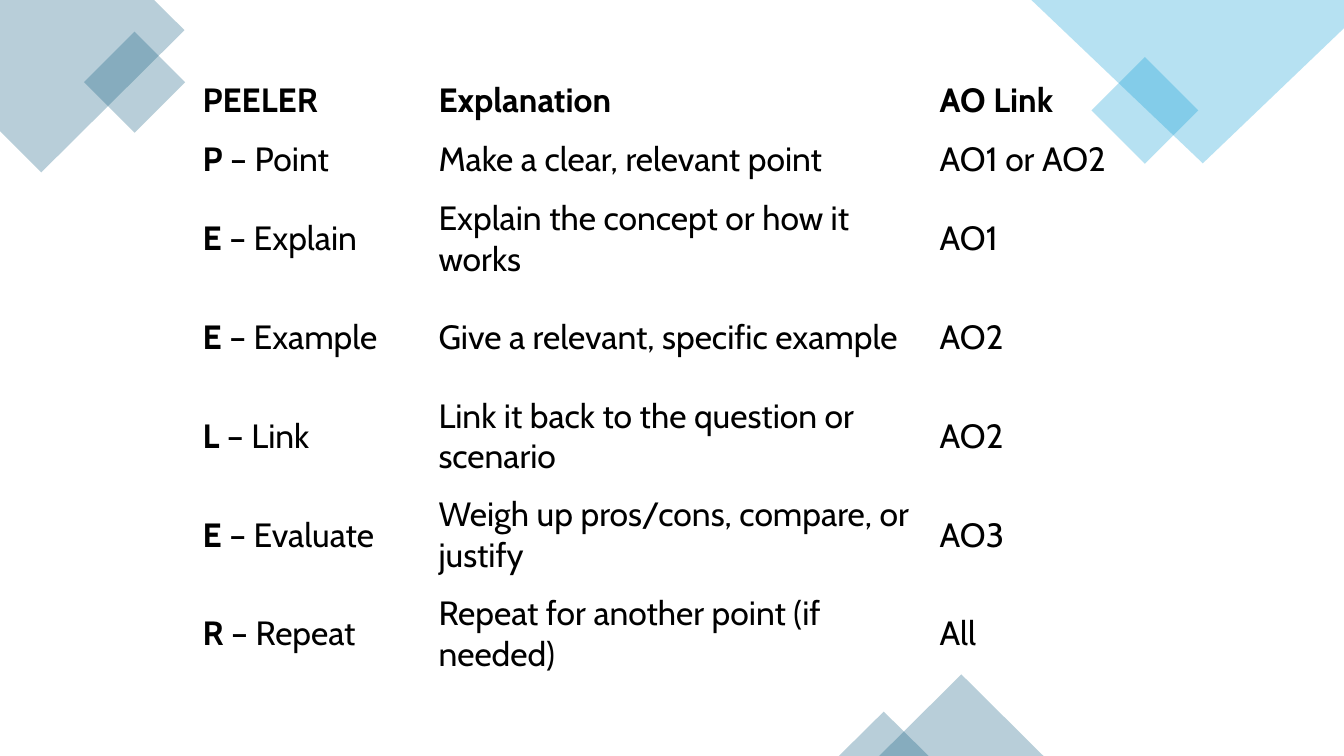
from dataclasses import dataclass

from lxml.etree import SubElement
from pptx import Presentation
from pptx.dml.color import RGBColor
from pptx.enum.shapes import MSO_SHAPE as Preset
from pptx.enum.text import MSO_ANCHOR as Anchor
from pptx.oxml.ns import qn
from pptx.shapes.autoshape import Shape
from pptx.slide import Slide
from pptx.table import _Cell as Cell
from pptx.util import Inches, Pt

TEAL = RGBColor(0x15, 0x60, 0x82)
BLUE = RGBColor(0x0F, 0x9E, 0xD5)
BLACK = RGBColor(0, 0, 0)
FONT = "Cabin"
PLAIN = "{2D5ABB26-0587-4C30-8999-92F81FD0307C}"


@dataclass
class Corner:
    points: list[tuple[float, float]]
    color: RGBColor


@dataclass
class Block:
    kind: Preset
    left: float
    top: float
    width: float
    height: float
    color: RGBColor
    turn: float = 0


@dataclass
class Step:
    letter: str
    name: str
    advice: str
    link: str


DECOR = [
    Corner([(1.53, 0), (0, 0), (0, 1.3), (0.41, 1.71), (1.83, 0.3)], TEAL),
    Block(Preset.RECTANGLE, 0.98, 0.46, 0.71, 0.71, TEAL, 315),
    Block(Preset.RECTANGLE, 10.98, 0.72, 0.75, 0.75, BLUE, 315),
    Corner([(13.33, 0), (10.23, 0), (11.93, 1.62), (13.33, 0.28)], BLUE),
    Block(Preset.ISOSCELES_TRIANGLE, 8.72, 6.69, 1.63, 0.81, TEAL),
    Block(Preset.ISOSCELES_TRIANGLE, 8.32, 7.06, 0.89, 0.44, TEAL),
]
HEADS = ["PEELER", "Explanation", "AO Link"]
STEPS = [
    Step("P", "Point", "Make a clear, relevant point", "AO1 or AO2"),
    Step("E", "Explain", "Explain the concept or how it works", "AO1"),
    Step("E", "Example", "Give a relevant, specific example", "AO2"),
    Step("L", "Link", "Link it back to the question or scenario", "AO2"),
    Step("E", "Evaluate", "Weigh up pros/cons, compare, or justify", "AO3"),
    Step("R", "Repeat", "Repeat for another point (if needed)", "All"),
]
WIDTHS = [2.34, 4.97, 2.27]
HEIGHTS = [0.59] * 2 + [0.98] * 5


def tint(shape: Shape, color: RGBColor) -> None:
    """Fill the shape at 30 % opacity, without line or shadow."""
    shape.shadow.inherit = False
    shape.line.fill.background()
    shape.fill.solid()
    shape.fill.fore_color.rgb = color
    fill = shape._element.spPr.find(qn("a:solidFill"))
    SubElement(fill[0], qn("a:alpha"), val="30000")


def draw_decor(slide: Slide, item: Corner | Block) -> None:
    if isinstance(item, Corner):
        first, *rest = [(Inches(x), Inches(y)) for x, y in item.points]
        path = slide.shapes.build_freeform(*first)
        path.add_line_segments(rest, close=True)
        shape = path.convert_to_shape()
    else:
        box = [Inches(n) for n in (item.left, item.top, item.width, item.height)]
        shape = slide.shapes.add_shape(item.kind, *box)
        shape.rotation = item.turn
    tint(shape, item.color)


def fill_cell(cell: Cell, bold: str, rest: str) -> None:
    cell.fill.background()
    cell.vertical_anchor = Anchor.MIDDLE
    cell.margin_left = cell.margin_right = Inches(0.13)
    cell.margin_top = cell.margin_bottom = Inches(0.07)
    para = cell.text_frame.paragraphs[0]
    for text, heavy in ((bold, True), (rest, False)):
        if text:
            run = para.add_run()
            run.text = text
            run.font.name = FONT
            run.font.size = Pt(24)
            run.font.bold = heavy
            run.font.color.rgb = BLACK


def draw_table(slide: Slide) -> None:
    rows = [[(head, "") for head in HEADS]]
    rows += [
        [(step.letter, f" – {step.name}"), ("", step.advice), ("", step.link)]
        for step in STEPS
    ]
    frame = slide.shapes.add_table(
        len(rows), len(HEADS), Inches(1.88), Inches(0.7),
        Inches(sum(WIDTHS)), Inches(sum(HEIGHTS)),
    )
    frame._element.xpath(".//a:tableStyleId")[0].text = PLAIN
    table = frame.table
    table.horz_banding = False
    for col, width in zip(table.columns, WIDTHS):
        col.width = Inches(width)
    for row, height, texts in zip(table.rows, HEIGHTS, rows):
        row.height = Inches(height)
        for cell, (bold, rest) in zip(row.cells, texts):
            fill_cell(cell, bold, rest)


def main() -> None:
    deck = Presentation()
    deck.slide_width = Inches(13.33)
    deck.slide_height = Inches(7.5)
    slide = deck.slides.add_slide(deck.slide_layouts[6])
    for item in DECOR:
        draw_decor(slide, item)
    draw_table(slide)
    deck.save("out.pptx")


if __name__ == "__main__":
    main()
